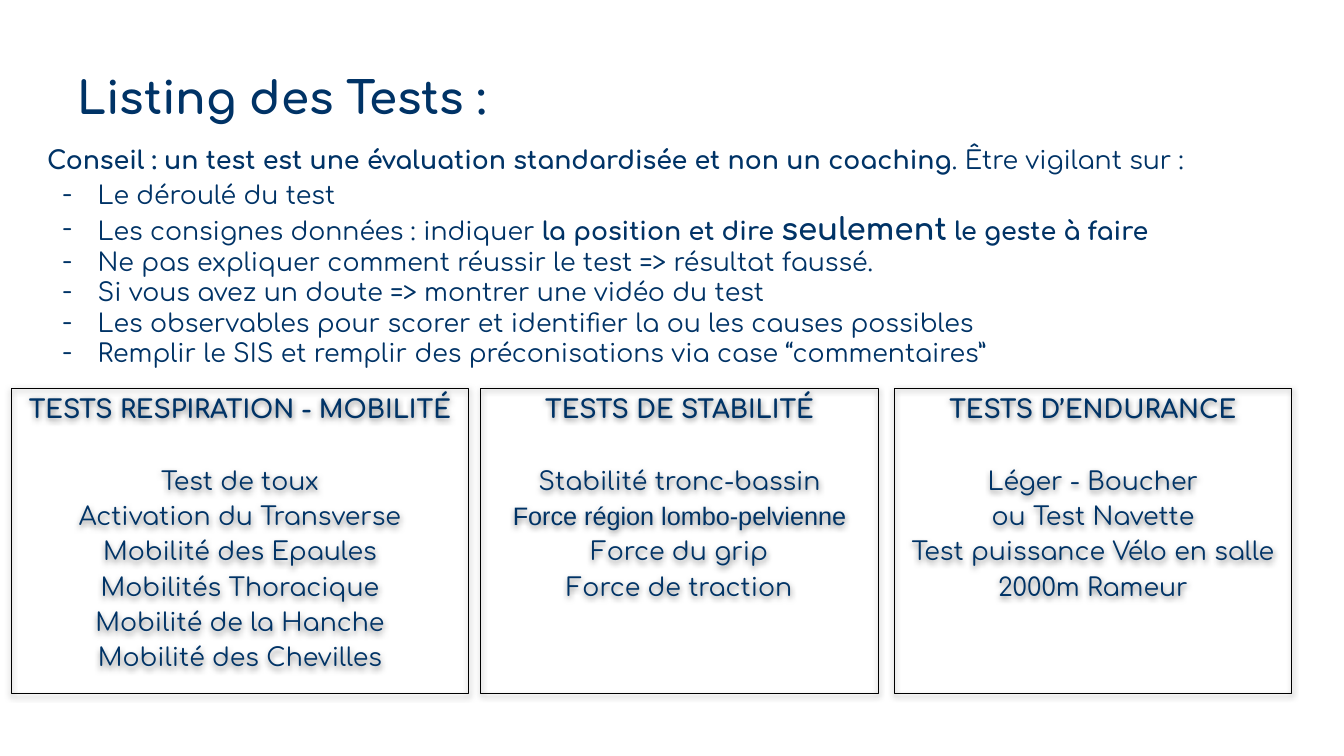
import pptx
import pptx.util
import pptx.dml.color
import pptx.enum.shapes
import pptx.enum.text
import pptx.oxml
import pptx.oxml.ns

Inches, Pt = pptx.util.Inches, pptx.util.Pt
ALIGN = pptx.enum.text.PP_ALIGN
ANCHOR = pptx.enum.text.MSO_ANCHOR

# Content
TITLE = "Listing des Tests :"
ADVICE = [
    ("Conseil : un test est une évaluation standardisée et non un coaching", {"bold": True}),
    (". Être vigilant sur :", {}),
]
POINTS = [
    [("Le déroulé du test", {})],
    [
        ("Les consignes données : indiquer ", {}),
        ("la position et dire ", {"bold": True}),
        ("seulement", {"bold": True, "size": Pt(22)}),
        (" le geste à faire", {"bold": True}),
    ],
    [("Ne pas expliquer comment réussir le test => résultat faussé.", {})],
    [("Si vous avez un doute => montrer une vidéo du test", {})],
    [("Les observables pour scorer et identifier la ou les causes possibles", {})],
    [("Remplir le SIS et remplir des préconisations via case “commentaires”", {})],
]
# Each panel: left, width, heading, tests
PANELS = [
    (0.11, 4.54, "TESTS RESPIRATION - MOBILITÉ",
     ["Test de toux", "Activation du Transverse", "Mobilité des Epaules",
      "Mobilités Thoracique", "Mobilité de la Hanche", "Mobilité des Chevilles"]),
    (4.77, 3.94, "TESTS DE STABILITÉ",
     ["Stabilité tronc-bassin", "Force région lombo-pelvienne",
      "Force du grip", "Force de traction"]),
    (8.87, 3.94, "TESTS D’ENDURANCE",
     ["Léger - Boucher", "ou Test Navette", "Test puissance Vélo en salle",
      "2000m Rameur"]),
]
ARIAL_TESTS = {"Force région lombo-pelvienne"}

# Style
COLORS = {"text": "003366", "line": "000000"}
BASE_FONT = {"name": "Comfortaa", "size": Pt(18), "bold": False}
FRAME = {"word_wrap": True, "margin_left": Inches(0.1), "margin_right": Inches(0.1),
         "margin_top": Inches(0.05), "margin_bottom": Inches(0.05)}
PANEL_TOP, PANEL_HEIGHT = 3.85, 3.03
LINE_GAP, HEADING_GAP = Pt(3.6), Pt(30)
NS = pptx.oxml.ns.nsdecls("a")


def rgb(name):
    return pptx.dml.color.RGBColor.from_string(COLORS[name])


def set_all(target, values):
    for name, value in values.items():
        setattr(target, name, value)


def write(para, spans, **layout):
    set_all(para, layout)
    for text, changes in spans:
        span = para.add_run()
        span.text = text
        set_all(span.font, {**BASE_FONT, **changes})
        span.font.color.rgb = rgb("text")


def add_dash(para):
    props = para._p.get_or_add_pPr()
    props.set("marL", str(Inches(0.5)))
    props.set("indent", str(Inches(-0.35)))
    for xml in (f'<a:buClr {NS}><a:srgbClr val="{COLORS["text"]}"/></a:buClr>',
                f'<a:buFont {NS} typeface="Comfortaa"/>',
                f'<a:buChar {NS} char="-"/>'):
        props.append(pptx.oxml.parse_xml(xml))


def add_shadow(shape):
    shape._element.spPr.append(pptx.oxml.parse_xml(
        f'<a:effectLst {NS}><a:outerShdw blurRad="{Pt(4.5)}" dist="{Pt(1.5)}" '
        f'dir="5400000" algn="ctr" rotWithShape="0"><a:srgbClr val="000000">'
        f'<a:alpha val="50000"/></a:srgbClr></a:outerShdw></a:effectLst>'))


deck = pptx.Presentation()
deck.slide_width, deck.slide_height = Inches(13.33), Inches(7.5)
page = deck.slides.add_slide(deck.slide_layouts[5])

# Title
title = page.shapes.title
set_all(title, {"left": Inches(0.67), "top": Inches(0.6),
                "width": Inches(12), "height": Inches(0.71)})
set_all(title.text_frame, {**FRAME, "vertical_anchor": ANCHOR.MIDDLE})
write(title.text_frame.paragraphs[0], [(TITLE, {"size": Pt(32), "bold": True})],
      alignment=ALIGN.LEFT)

# Advice and dashed points
advice = page.shapes.add_textbox(Inches(0.37), Inches(1.38), Inches(12.49), Inches(2.36))
frame = advice.text_frame
set_all(frame, FRAME)
write(frame.paragraphs[0], ADVICE)
for index, spans in enumerate(POINTS):
    para = frame.add_paragraph()
    add_dash(para)
    write(para, spans, space_before=LINE_GAP if index == 0 else Pt(0))

# Test panels
for left, width, heading, tests in PANELS:
    panel = page.shapes.add_shape(
        pptx.enum.shapes.MSO_SHAPE.RECTANGLE,
        Inches(left), Inches(PANEL_TOP), Inches(width), Inches(PANEL_HEIGHT))
    panel.fill.background()
    panel.line.color.rgb = rgb("line")
    panel.line.width = Pt(0.75)
    add_shadow(panel)
    frame = panel.text_frame
    set_all(frame, {**FRAME, "vertical_anchor": ANCHOR.TOP})
    write(frame.paragraphs[0], [(heading, {"bold": True})], alignment=ALIGN.CENTER)
    for index, test in enumerate(tests):
        font = {"name": "Arial"} if test in ARIAL_TESTS else {}
        write(frame.add_paragraph(), [(test, font)], alignment=ALIGN.CENTER,
              space_before=HEADING_GAP if index == 0 else LINE_GAP)

deck.save("out.pptx")
